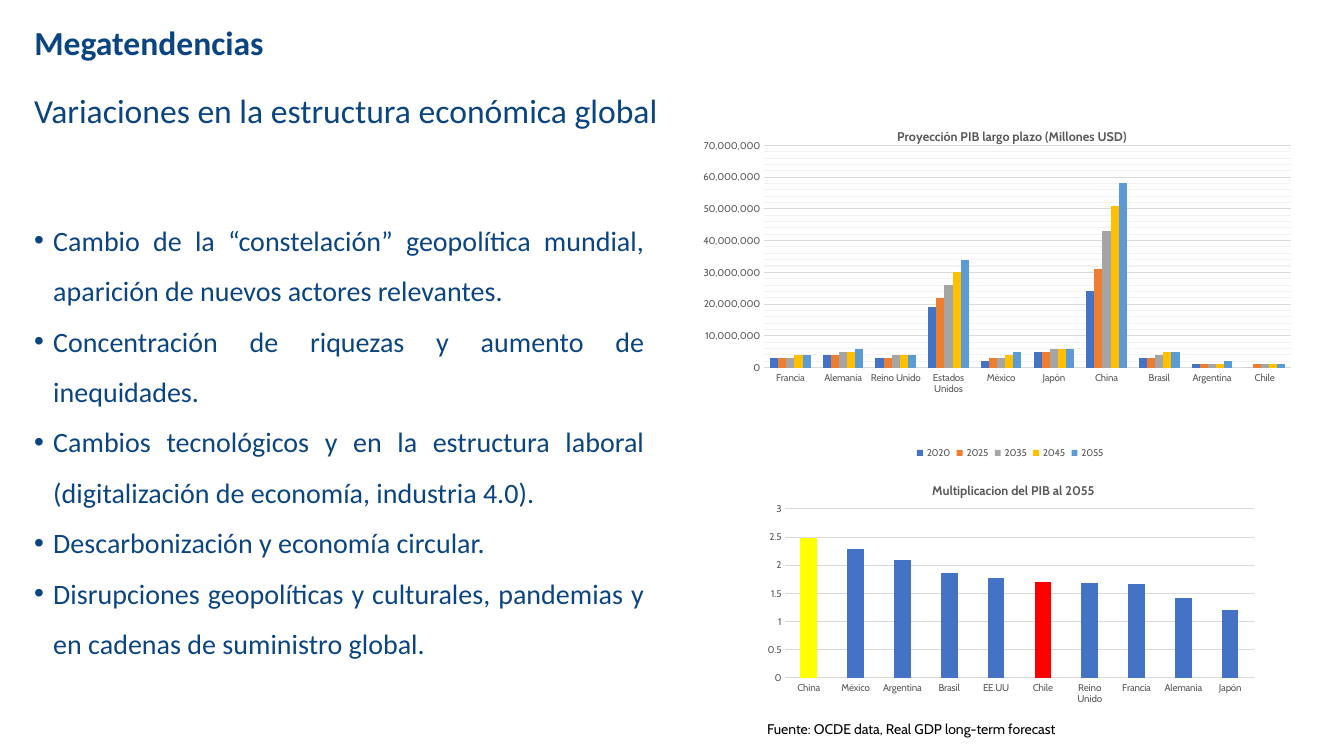
import pptx
import pptx.chart.data
import pptx.dml.chtfmt
import pptx.dml.color
import pptx.enum.chart
import pptx.enum.text
import pptx.oxml
import pptx.oxml.ns
import pptx.util

RGBColor = pptx.dml.color.RGBColor
NAVY = RGBColor(0x0B, 0x45, 0x81)
BLACK = RGBColor(0, 0, 0)
GRAY_TEXT = RGBColor(0x59, 0x59, 0x59)
GRID = RGBColor(0xD9, 0xD9, 0xD9)
MINOR_GRID = RGBColor(0xF2, 0xF2, 0xF2)
BLUE = RGBColor(0x44, 0x72, 0xC4)
ORANGE = RGBColor(0xED, 0x7D, 0x31)
GRAY = RGBColor(0xA5, 0xA5, 0xA5)
GOLD = RGBColor(0xFF, 0xC0, 0x00)
LIGHT_BLUE = RGBColor(0x5B, 0x9B, 0xD5)
YELLOW = RGBColor(0xFF, 0xFF, 0x00)
RED = RGBColor(0xFF, 0, 0)

Pt = pptx.util.Pt
qn = pptx.oxml.ns.qn
Align = pptx.enum.text.PP_ALIGN
Fit = pptx.enum.text.MSO_AUTO_SIZE

deck = pptx.Presentation()
deck.slide_width = pptx.util.Inches(13.33)
deck.slide_height = pptx.util.Inches(7.5)
slide = deck.slides.add_slide(deck.slide_layouts[5])


def area(left, top, width, height):
    """Turn percentages of the slide into lengths."""
    col, row = deck.slide_width / 100, deck.slide_height / 100
    return int(left * col), int(top * row), int(width * col), int(height * row)


def place(parent, position, **shares):
    """Fix a chart part inside its chart, in shares of the chart's size."""
    layout = parent.find(qn("c:layout"))
    if layout is None:
        layout = pptx.oxml.parse_xml(
            '<c:layout xmlns:c="http://schemas.openxmlformats.org/drawingml/2006/chart"/>')
        parent.insert(position, layout)
    manual = layout.makeelement(qn("c:manualLayout"), {})
    layout.append(manual)
    for tag, value in shares.items():
        part = manual.makeelement(qn("c:" + tag), {"val": str(value)})
        manual.append(part)


# Texts: title, subtitle, bullets and source
heading = slide.shapes.title
heading.left, heading.top, heading.width, heading.height = area(1.8, 2.8, 86.27, 7.6)
subtitle = slide.shapes.add_textbox(*area(1.8, 10.4, 86.27, 8.67))
trends = slide.shapes.add_textbox(*area(1.8, 26.67, 46.89, 61.87))
source = slide.shapes.add_textbox(*area(56.34, 94.67, 25.81, 3.6))

texts = [
    (heading, ["Megatendencias"], Align.LEFT, 0.9, Fit.NONE,
     {"size": Pt(24), "name": "Calibri", "bold": True}, NAVY),
    (subtitle, ["Variaciones en la estructura económica global"], Align.JUSTIFY, 1.15, Fit.NONE,
     {"size": Pt(24), "name": "Calibri"}, NAVY),
    (trends, [
        "Cambio de la “constelación” geopolítica mundial, aparición de nuevos actores relevantes.",
        "Concentración de riquezas y aumento de inequidades.",
        "Cambios tecnológicos y en la estructura laboral (digitalización de economía, industria 4.0).",
        "Descarbonización y economía circular.",
        "Disrupciones geopolíticas y culturales, pandemias y en cadenas de suministro global.",
    ], Align.JUSTIFY, 1.5, Fit.SHAPE_TO_FIT_TEXT, {"size": Pt(20), "name": "Calibri"}, NAVY),
    (source, ["Fuente: OCDE data, Real GDP long-term forecast"], Align.LEFT, 1.0,
     Fit.SHAPE_TO_FIT_TEXT, {"size": Pt(10), "name": "Cabin"}, BLACK),
]
for holder, lines, alignment, spacing, fit, style, color in texts:
    frame = holder.text_frame
    frame.word_wrap = True
    frame.auto_size = fit
    frame.vertical_anchor = pptx.enum.text.MSO_ANCHOR.TOP
    frame.text = "\n".join(lines)
    for paragraph in frame.paragraphs:
        paragraph.alignment = alignment
        paragraph.line_spacing = spacing
        if holder is trends:
            indent = pptx.util.Inches(0.19)
            props = paragraph._p.get_or_add_pPr()
            props.set("marL", str(indent))
            props.set("indent", str(-indent))
            props.append(props.makeelement(qn("a:buFont"), {"typeface": "Arial"}))
            props.append(props.makeelement(qn("a:buChar"), {"char": "•"}))
        for run in paragraph.runs:
            for key, value in style.items():
                setattr(run.font, key, value)
            run.font.color.rgb = color

# Chart data
M = 1_000_000
projection = pptx.chart.data.CategoryChartData(number_format="#,##0")
projection.categories = ["Francia", "Alemania", "Reino Unido", "Estados Unidos", "México",
                         "Japón", "China", "Brasil", "Argentina", "Chile"]
for year, gdp in {
    "2020": [3, 4, 3, 19, 2, 5, 24, 3, 1, 0],
    "2025": [3, 4, 3, 22, 3, 5, 31, 3, 1, 1],
    "2035": [3, 5, 4, 26, 3, 6, 43, 4, 1, 1],
    "2045": [4, 5, 4, 30, 4, 6, 51, 5, 1, 1],
    "2055": [4, 6, 4, 34, 5, 6, 58, 5, 2, 1],
}.items():
    projection.add_series(year, [value * M for value in gdp])

growth = pptx.chart.data.CategoryChartData()
growth.categories = ["China", "México", "Argentina", "Brasil", "EE.UU", "Chile",
                     "Reino Unido", "Francia", "Alemania", "Japón"]
growth.add_series("Series 1", [2.48, 2.29, 2.09, 1.87, 1.78, 1.71, 1.69, 1.66, 1.42, 1.21])

charts = [
    {"data": projection, "area": area(51.31, 14.67, 47.71, 46.53),
     "title": "Proyección PIB largo plazo (Millones USD)", "title_at": (0.32, 0.04),
     "plot": (0.116, 0.098, 0.822, 0.632), "gap": 150, "top": 70 * M, "step": 10 * M,
     "format": "#,##0", "colors": [BLUE, ORANGE, GRAY, GOLD, LIGHT_BLUE], "points": {}},
    {"data": growth, "area": area(56.41, 61.47, 37.58, 32.53),
     "title": "Multiplicacion del PIB al 2055", "title_at": (0.34, 0.06),
     "plot": (0.054, 0.18, 0.927, 0.687), "gap": 182, "top": 3, "step": 0.5,
     "format": "General", "colors": [BLUE], "points": {0: YELLOW, 5: RED}},
]
for look in charts:
    chart = slide.shapes.add_chart(
        pptx.enum.chart.XL_CHART_TYPE.COLUMN_CLUSTERED, *look["area"], look["data"]).chart
    chart.font.name = "Cabin"
    chart.font.size = Pt(7)
    chart.font.color.rgb = GRAY_TEXT

    # Title and plot position
    chart.has_title = True
    chart.chart_title.text_frame.text = look["title"]
    title_font = chart.chart_title.text_frame.paragraphs[0].runs[0].font
    for key, value in {"name": "Cabin", "size": Pt(9), "bold": True}.items():
        setattr(title_font, key, value)
    title_font.color.rgb = GRAY_TEXT
    x, y = look["title_at"]
    place(chart.chart_title._element, 1, xMode="edge", yMode="edge", x=x, y=y)
    x, y, w, h = look["plot"]
    place(chart._chartSpace.chart.plotArea, 0, layoutTarget="inner",
          xMode="edge", yMode="edge", x=x, y=y, w=w, h=h)

    # Axes
    values, categories = chart.value_axis, chart.category_axis
    for axis in (values, categories):
        axis.major_tick_mark = pptx.enum.chart.XL_TICK_MARK.NONE
        axis.format.line.fill.background()
    for key, value in {"minimum_scale": 0, "maximum_scale": look["top"],
                       "major_unit": look["step"], "has_major_gridlines": True}.items():
        setattr(values, key, value)
    values.tick_labels.number_format = look["format"]
    values.tick_labels.number_format_is_linked = False
    rules = [(values.major_gridlines.format.line, GRID)]

    # Bars
    plot = chart.plots[0]
    plot.vary_by_categories = False
    plot.gap_width = look["gap"]
    plot.overlap = 0
    for series, color in zip(plot.series, look["colors"]):
        series.format.fill.solid()
        series.format.fill.fore_color.rgb = color
        for index, accent in look["points"].items():
            bar = series.points[index].format.fill
            bar.solid()
            bar.fore_color.rgb = accent

    # Legend and minor grid for several years, a base line for a single series
    chart.has_legend = len(look["colors"]) > 1
    if chart.has_legend:
        chart.legend.position = pptx.enum.chart.XL_LEGEND_POSITION.BOTTOM
        chart.legend.include_in_layout = False
        values.minor_unit = look["step"] / 5
        values.has_minor_gridlines = True
        minor = values._element.find(qn("c:minorGridlines"))
        minor.append(minor.makeelement(qn("c:spPr"), {}))
        minor_line = pptx.dml.line.LineFormat(minor[0])
        rules.append((minor_line, MINOR_GRID))
    else:
        rules.append((categories.format.line, GRID))
    for line, color in rules:
        line.color.rgb = color
        line.width = Pt(0.75)

deck.save("out.pptx")
